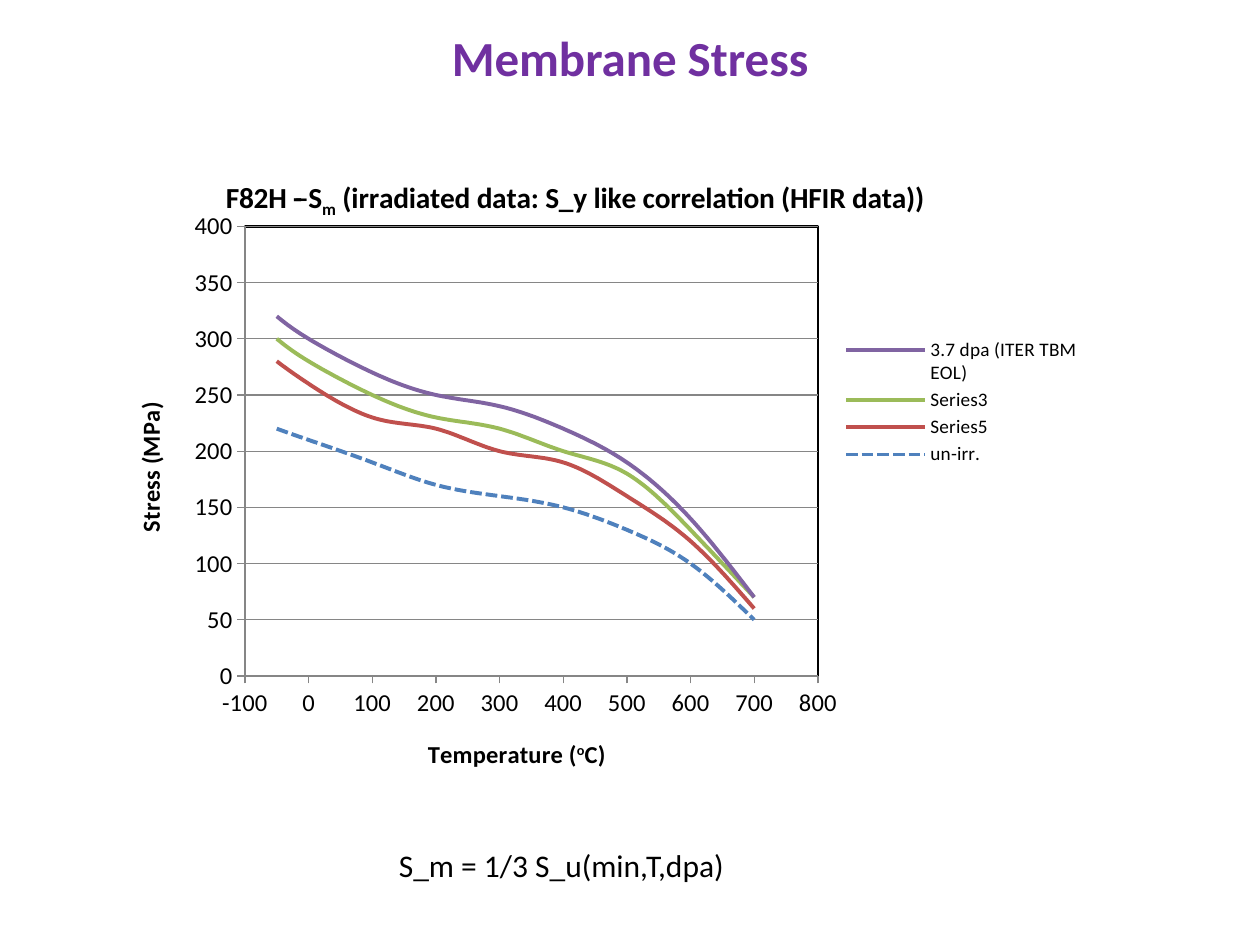
from dataclasses import dataclass

from lxml.etree import SubElement
from pptx import Presentation
from pptx.chart.data import XyChartData
from pptx.dml.color import RGBColor
from pptx.enum.chart import (XL_AXIS_CROSSES as Crosses, XL_CHART_TYPE as ChartType,
                             XL_LEGEND_POSITION as LegendPos, XL_TICK_MARK as Tick)
from pptx.enum.dml import MSO_LINE as Dash
from pptx.enum.text import MSO_ANCHOR as Anchor, PP_ALIGN as Align
from pptx.oxml import parse_xml
from pptx.oxml.ns import nsdecls, qn
from pptx.util import Inches, Pt

PX = Inches(1) // 126
CHART_W, CHART_H = 1063, 606
TEMPERATURES = [-50, 0, 100, 200, 300, 400, 500, 600, 700]


@dataclass(frozen=True)
class Theme:
    font: str = "Calibri"
    title: str = "7030A0"
    text: str = "000000"
    grid: str = "868686"
    title_size: int = 28
    body_size: int = 18
    chart_title_size: float = 16.8
    axis_size: int = 14
    legend_size: int = 11


@dataclass(frozen=True)
class Curve:
    name: str
    color: str
    stresses: tuple
    dash: Dash = Dash.SOLID


CURVES = [
    Curve("3.7 dpa (ITER TBM EOL)", "8064A2", (320, 300, 270, 250, 240, 220, 190, 140, 70)),
    Curve("Series3", "9BBB59", (300, 280, 250, 230, 220, 200, 180, 130, 70)),
    Curve("Series5", "C0504D", (280, 260, 230, 220, 200, 190, 160, 120, 60)),
    Curve("un-irr.", "4F81BD", (220, 210, 190, 170, 160, 150, 130, 100, 50), Dash.SQUARE_DOT),
]


def set_layout(element, index, x, y, w=None, h=None, inner=False):
    """Place a chart part by px from the chart's top left corner."""
    for old in element.findall(qn("c:layout")):
        element.remove(old)
    layout = parse_xml(f"<c:layout {nsdecls('c')}><c:manualLayout/></c:layout>")
    values = {"layoutTarget": "inner"} if inner else {}
    values.update(xMode="edge", yMode="edge", x=x / CHART_W, y=y / CHART_H)
    if w:
        values.update(w=w / CHART_W, h=h / CHART_H)
    for tag, value in values.items():
        SubElement(layout[0], qn(f"c:{tag}")).set("val", str(value))
    element.insert(index, layout)


class SlideBuilder:
    def __init__(self, prs, theme):
        self.theme = theme
        self.s = prs.slides.add_slide(prs.slide_layouts[5])

    def style(self, font, size, color=None, bold=False):
        font.name, font.size, font.bold = self.theme.font, Pt(size), bold
        font.color.rgb = RGBColor.from_string(color or self.theme.text)

    def line(self, line, color, width):
        line.color.rgb = RGBColor.from_string(color)
        line.width = Pt(width)

    def fill_text(self, sp, text, size, color=None, bold=False):
        tf = sp.text_frame
        tf.word_wrap = True
        tf.text = text
        p = tf.paragraphs[0]
        p.alignment = Align.CENTER
        self.style(p.runs[0].font, size, color, bold)

    def title(self, text, x, y, w, h):
        sp = self.s.shapes.title
        sp.left, sp.top, sp.width, sp.height = (v * PX for v in (x, y, w, h))
        sp.text_frame.vertical_anchor = Anchor.MIDDLE
        self.fill_text(sp, text, self.theme.title_size, self.theme.title, True)

    def text(self, text, x, y, w, h):
        sp = self.s.shapes.add_textbox(*(v * PX for v in (x, y, w, h)))
        self.fill_text(sp, text, self.theme.body_size)

    def chart_heading(self, tf, parts, size):
        """Write (text, baseline percent) parts as runs of one heading."""
        p = tf.paragraphs[0]
        for text, baseline in parts:
            r = p.add_run()
            r.text = text
            self.style(r.font, size, bold=True)
            if baseline:
                r._r.get_or_add_rPr().set("baseline", str(baseline * 1000))

    def axis(self, axis, low, high, step, heading):
        axis.minimum_scale, axis.maximum_scale, axis.major_unit = low, high, step
        axis.major_tick_mark, axis.minor_tick_mark = Tick.OUTSIDE, Tick.NONE
        axis.crosses = Crosses.MINIMUM
        labels = axis.tick_labels
        labels.number_format, labels.number_format_is_linked = "0", False
        self.line(axis.format.line, self.theme.grid, 0.75)
        self.chart_heading(axis.axis_title.text_frame, heading, self.theme.axis_size)

    def stress_chart(self, x, y):
        theme = self.theme
        data = XyChartData()
        for curve in CURVES:
            series = data.add_series(curve.name)
            for point in zip(TEMPERATURES, curve.stresses):
                series.add_data_point(*point)
        frame = self.s.shapes.add_chart(ChartType.XY_SCATTER_SMOOTH_NO_MARKERS,
                                        *(v * PX for v in (x, y, CHART_W, CHART_H)), data)
        chart = frame.chart
        self.style(chart.font, theme.axis_size)
        chart.plots[0].vary_by_categories = False
        for series, curve in zip(chart.plots[0].series, CURVES):
            series.smooth = True
            smooth = series._element.find(qn("c:smooth"))
            if smooth is None:
                smooth = SubElement(series._element, qn("c:smooth"))
            smooth.set("val", "1")
            self.line(series.format.line, curve.color, 2.25)
            series.format.line.dash_style = curve.dash

        chart.has_title = True
        self.chart_heading(chart.chart_title.text_frame,
                           [("F82H -̶ S", 0), ("m", -25),
                            (" (irradiated data: S_y like correlation (HFIR data))", 0)],
                           theme.chart_title_size)
        self.axis(chart.category_axis, -100, 800, 100,
                  [("Temperature (", 0), ("o", 30), ("C)", 0)])
        self.axis(chart.value_axis, 0, 400, 50, [("Stress (MPa)", 0)])
        chart.category_axis.has_major_gridlines = False
        chart.value_axis.has_major_gridlines = True
        self.line(chart.value_axis.major_gridlines.format.line, theme.grid, 0.75)

        chart.has_legend = True
        legend = chart.legend
        legend.position, legend.include_in_layout = LegendPos.RIGHT, False
        self.style(legend.font, theme.legend_size)
        self.place_chart_parts(chart)

    def place_chart_parts(self, chart):
        root = chart.element
        heading = root.find(qn("c:chart")).find(qn("c:title"))
        heading.find(qn("c:overlay")).set("val", "1")
        set_layout(heading, 1, 124, 5)
        for axis, (left, top) in zip(root.findall(".//" + qn("c:valAx")),
                                     [(326, 569), (31, 231)]):
            set_layout(axis.find(qn("c:title")), 1, left, top)
        set_layout(root.find(".//" + qn("c:legend")), 1, 736, 166, 255, 137)
        plot = root.find(".//" + qn("c:plotArea"))
        set_layout(plot, 0, 147, 57, 573, 454, inner=True)
        plot.append(parse_xml(
            f"<c:spPr {nsdecls('c', 'a')}><a:noFill/><a:ln w='{Pt(1.5)}'><a:solidFill>"
            f"<a:srgbClr val='{self.theme.text}'/></a:solidFill></a:ln></c:spPr>"))


def main():
    prs = Presentation()
    prs.slide_width, prs.slide_height = Inches(10), Inches(7.5)
    slide = SlideBuilder(prs, Theme())
    slide.stress_chart(98, 170)
    slide.text("S_m = 1/3 S_u(min,T,dpa)", 273, 840, 577, 50)
    slide.title("Membrane Stress", 0, 15, 1260, 84)
    prs.save("out.pptx")


if __name__ == "__main__":
    main()
